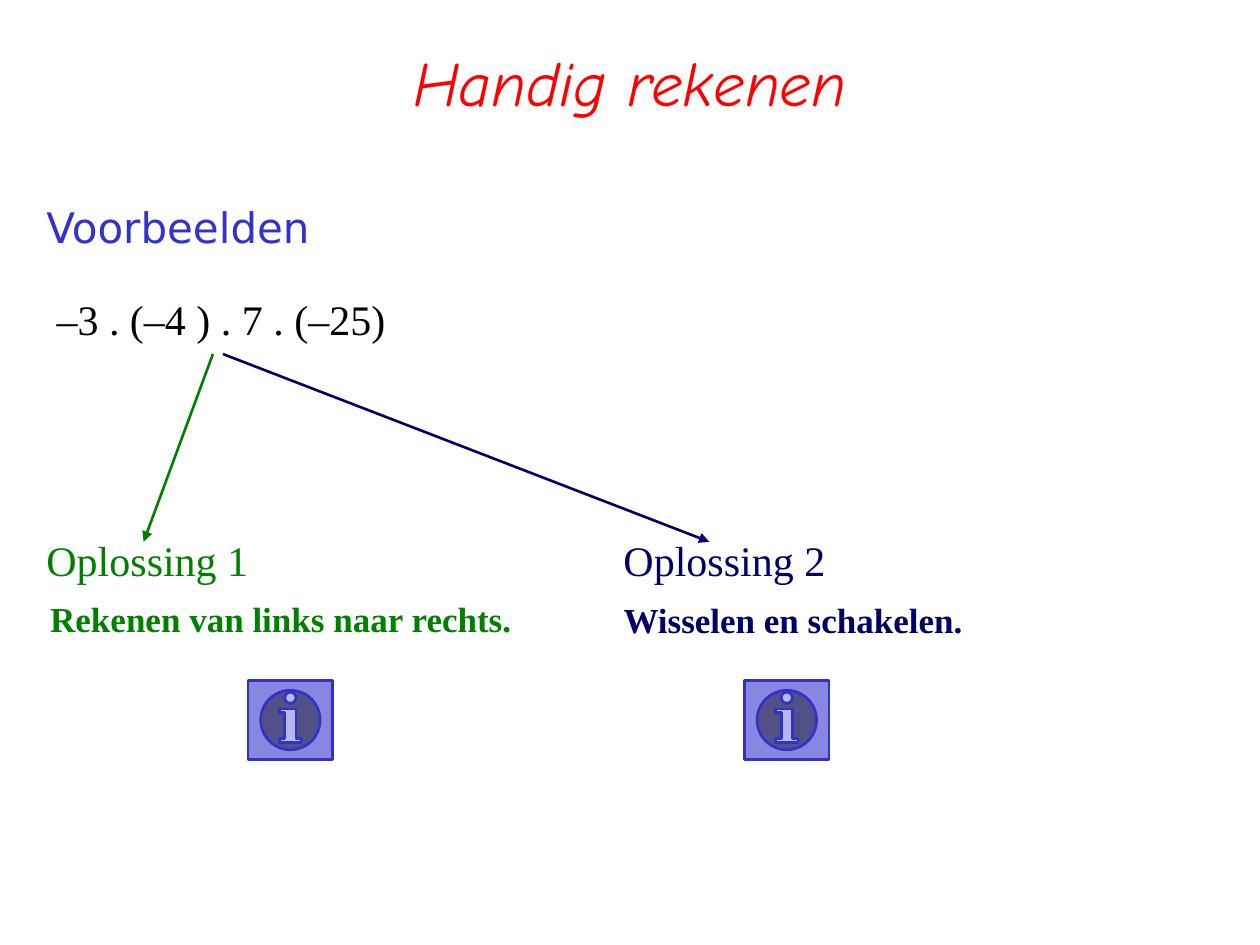
"""Builds the slide on clever calculation with two ways to a solution."""
from dataclasses import dataclass

from lxml import etree
from pptx import Presentation
from pptx.dml.color import RGBColor
from pptx.enum.shapes import MSO_CONNECTOR, MSO_SHAPE
from pptx.enum.text import MSO_ANCHOR, MSO_AUTO_SIZE, PP_ALIGN
from pptx.oxml.ns import qn
from pptx.util import Emu, Pt

PX = 9144
LINE = MSO_CONNECTOR.STRAIGHT
INFO = MSO_SHAPE.ACTION_BUTTON_INFORMATION
MIDDLE = MSO_ANCHOR.MIDDLE
FIT = MSO_AUTO_SIZE.SHAPE_TO_FIT_TEXT
LEFT, CENTER = PP_ALIGN.LEFT, PP_ALIGN.CENTER
SERIF = "Times New Roman"
COLORS = {
    "red": "FF0000",
    "blue": "3333CC",
    "black": "000000",
    "green": "008000",
    "navy": "000066",
    "button": "8787E1",
    "edge": "3232C8",
}


@dataclass(frozen=True)
class Box:
    left: int
    top: int
    width: int
    height: int

    def emu(self) -> list[Emu]:
        return [px(n) for n in (self.left, self.top, self.width, self.height)]


@dataclass(frozen=True)
class Answer:
    name: str
    method: str
    color: str
    start: int
    end: int
    head: Box
    body: Box
    button: Box


ANSWERS = [
    Answer("Oplossing 1", "Rekenen van links naar rechts.", "green", 169, 114,
           Box(27, 419, 180, 50), Box(30, 469, 386, 43), Box(197, 540, 67, 63)),
    Answer("Oplossing 2", "Wisselen en schakelen.", "navy", 177, 563,
           Box(485, 419, 180, 50), Box(485, 470, 289, 43), Box(591, 540, 67, 63)),
]


def px(count: int) -> Emu:
    return Emu(count * PX)


def rgb(name: str) -> RGBColor:
    return RGBColor.from_string(COLORS[name])


def write(frame, text: str, *, size: int = 24, color: str = "black", font: str = SERIF,
          bold: bool = False, italic: bool = False, align=LEFT) -> None:
    para = frame.paragraphs[0]
    para.alignment = align
    run = para.add_run()
    run.text = text
    run.font.name = font
    run.font.size = Pt(size)
    run.font.bold = bold
    run.font.italic = italic
    run.font.color.rgb = rgb(color)


def add_label(slide, box: Box, text: str, **style) -> None:
    frame = slide.shapes.add_textbox(*box.emu()).text_frame
    frame.word_wrap = False
    frame.auto_size = FIT
    write(frame, text, **style)


def add_title(slide, box: Box, text: str) -> None:
    title = slide.shapes.title
    title.left, title.top, title.width, title.height = box.emu()
    title.text_frame.vertical_anchor = MIDDLE
    write(title.text_frame, text, size=36, color="red", font="Comic Neue",
          italic=True, align=CENTER)


def add_arrow(slide, start: int, end: int, color: str) -> None:
    arrow = slide.shapes.add_connector(LINE, px(start), px(281), px(end), px(430))
    arrow.line.color.rgb = rgb(color)
    arrow.line.width = Pt(1.5)
    etree.SubElement(arrow.line._get_or_add_ln(), qn("a:tailEnd"), type="triangle")
    etree.SubElement(arrow._element.spPr, qn("a:effectLst"))


def add_button(slide, box: Box) -> None:
    button = slide.shapes.add_shape(INFO, *box.emu())
    button.shadow.inherit = False
    button.fill.solid()
    button.fill.fore_color.rgb = rgb("button")
    button.line.color.rgb = rgb("edge")
    button.line.width = Pt(1.5)


def add_answer(slide, answer: Answer) -> None:
    add_arrow(slide, answer.start, answer.end, answer.color)
    add_label(slide, answer.head, answer.name, color=answer.color)
    add_label(slide, answer.body, answer.method, size=20, color=answer.color, bold=True)
    add_button(slide, answer.button)


def main() -> None:
    deck = Presentation()
    deck.slide_width, deck.slide_height = px(1000), px(750)
    slide = deck.slides.add_slide(deck.slide_layouts[5])
    add_title(slide, Box(75, 21, 850, 87), "Handig rekenen")
    add_label(slide, Box(27, 155, 229, 50), "Voorbeelden", color="blue", font="DejaVu Sans")
    add_label(slide, Box(35, 228, 281, 50), "–3 . (–4 ) . 7 . (–25)")
    for answer in ANSWERS:
        add_answer(slide, answer)
    deck.save("out.pptx")


if __name__ == "__main__":
    main()
